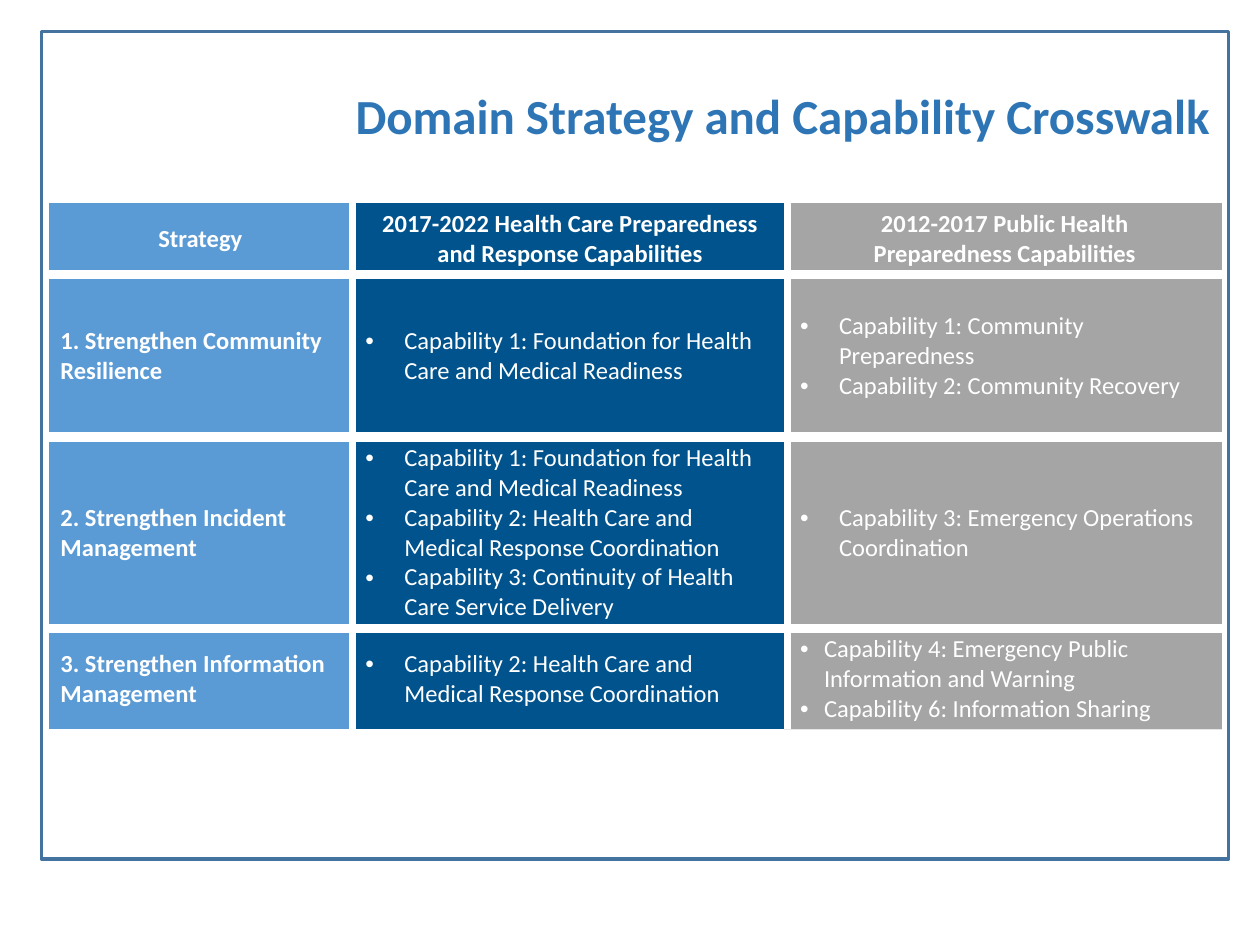
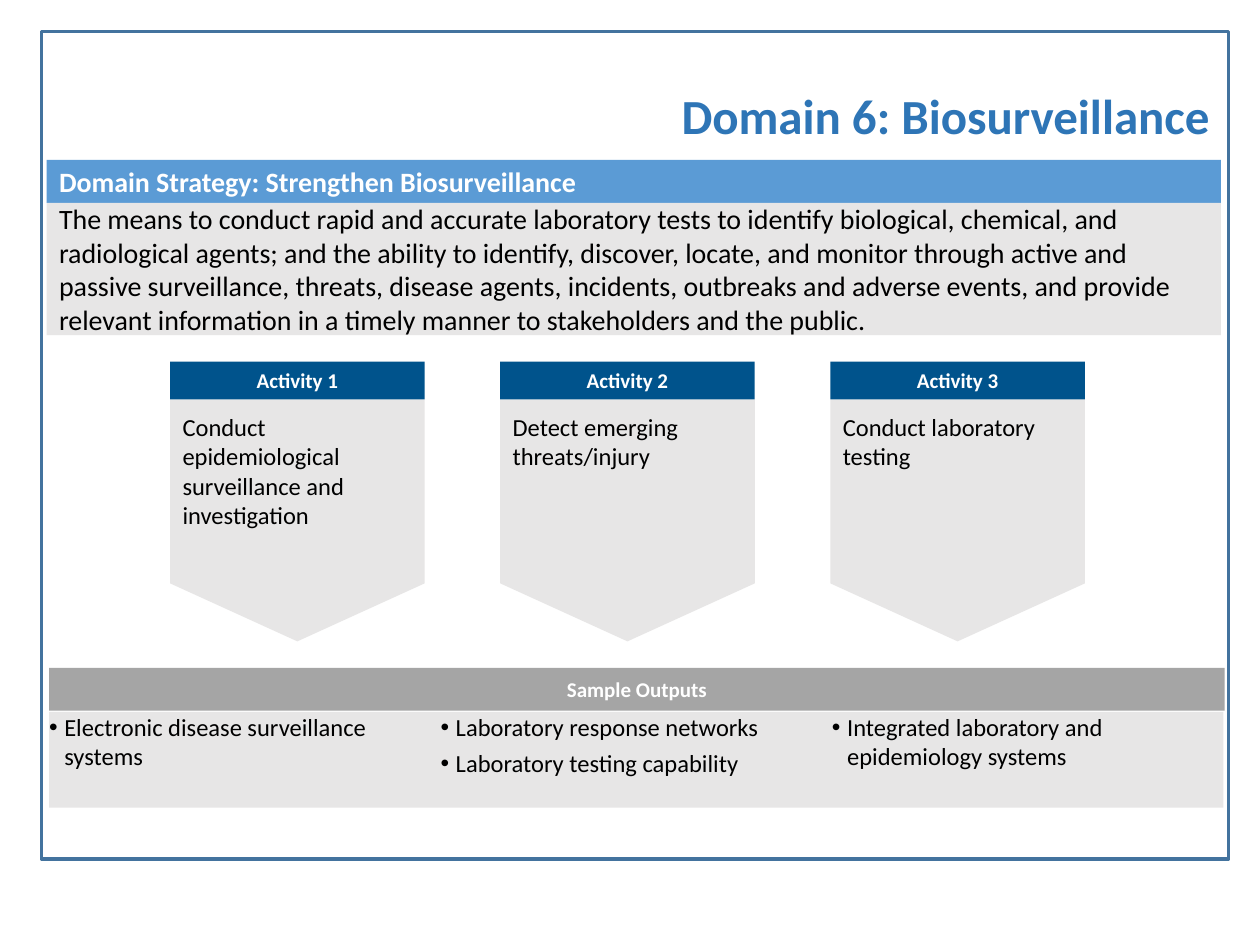
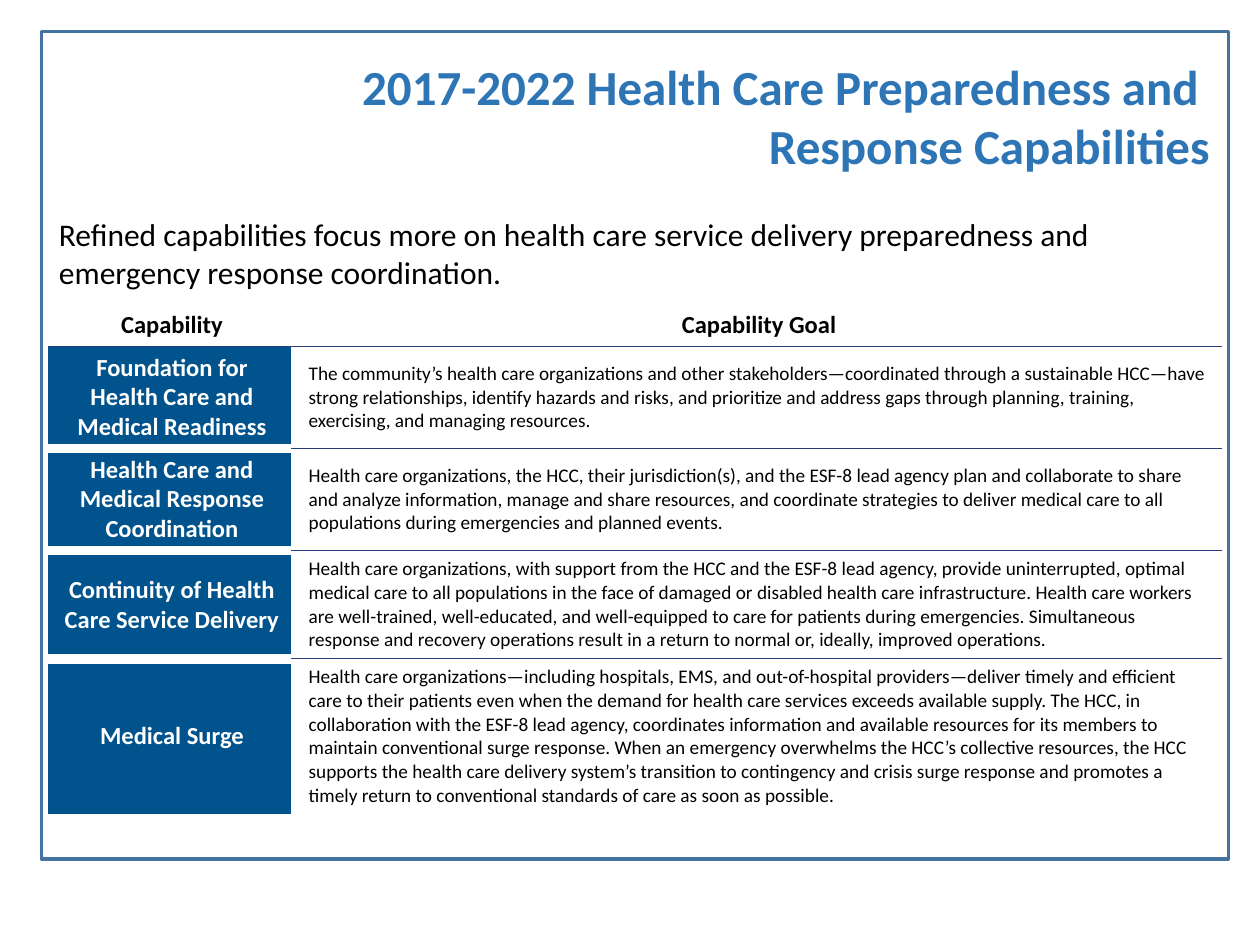
from copy import deepcopy

from pptx import Presentation
from pptx.dml.color import RGBColor
from pptx.enum.shapes import MSO_SHAPE
from pptx.enum.text import MSO_ANCHOR, MSO_AUTO_SIZE, PP_ALIGN
from pptx.oxml.ns import qn
from pptx.util import Inches, Pt
from lxml.etree import SubElement

FONT = "Calibri"
WHITE, BLACK, TITLE, FRAME = "FFFFFF", "000000", "2E75B6", "43739E"
SKY, NAVY, GRAY, PALE, RULE = "5B9BD5", "00538C", "A5A5A5", "E7E6E6", "273D77"
NO_STYLE = "{2D5ABB26-0587-4C30-8999-92F81FD0307C}"
CENTER, RIGHT = PP_ALIGN.CENTER, PP_ALIGN.RIGHT
TOP, MIDDLE = MSO_ANCHOR.TOP, MSO_ANCHOR.MIDDLE

CROSSWALK_HEADER = [
    ["Strategy"],
    ["2017-2022 Health Care Preparedness and Response Capabilities"],
    ["2012-2017 Public Health", "Preparedness Capabilities"],
]
CROSSWALK = [
    (["1. Strengthen Community Resilience"],
     ["Capability 1: Foundation for Health Care and Medical Readiness"],
     ["Capability 1: Community Preparedness", "Capability 2: Community Recovery"]),
    (["2. Strengthen Incident Management"],
     ["Capability 1: Foundation for Health Care and Medical Readiness",
      "Capability 2: Health Care and Medical Response Coordination",
      "Capability 3: Continuity of Health Care Service Delivery"],
     ["Capability 3: Emergency Operations Coordination"]),
    (["3. Strengthen Information Management"],
     ["Capability 2: Health Care and Medical Response Coordination"],
     ["Capability 4: Emergency Public Information and Warning",
      "Capability 6: Information Sharing"]),
]
STRATEGY = (
    "The means to conduct rapid and accurate laboratory tests to identify biological, "
    "chemical, and radiological agents; and the ability to identify, discover, locate, and "
    "monitor through active and passive surveillance, threats, disease agents, incidents, "
    "outbreaks and adverse events, and provide relevant information in a timely manner to "
    "stakeholders and the public."
)
ACTIVITIES = [
    "Conduct epidemiological surveillance and investigation",
    "Detect emerging threats/injury",
    "Conduct laboratory testing",
]
OUTPUTS = [
    ["Electronic disease surveillance systems"],
    ["Laboratory response networks", "Laboratory testing capability"],
    ["Integrated laboratory and epidemiology systems"],
]
GOALS = [
    ("Foundation for Health Care and Medical Readiness",
     "The community’s health care organizations and other stakeholders—coordinated through a "
     "sustainable HCC—have strong relationships, identify hazards and risks, and prioritize "
     "and address gaps through planning, training, exercising, and managing resources."),
    ("Health Care and Medical Response Coordination",
     "Health care organizations, the HCC, their jurisdiction(s), and the ESF-8 lead agency "
     "plan and collaborate to share and analyze information, manage and share resources, and "
     "coordinate strategies to deliver medical care to all populations during emergencies "
     "and planned events."),
    ("Continuity of Health Care Service Delivery",
     "Health care organizations, with support from the HCC and the ESF-8 lead agency, provide "
     "uninterrupted, optimal medical care to all populations in the face of damaged or "
     "disabled health care infrastructure. Health care workers are well-trained, "
     "well-educated, and well-equipped to care for patients during emergencies. Simultaneous "
     "response and recovery operations result in a return to normal or, ideally, improved "
     "operations."),
    ("Medical Surge",
     "Health care organizations—including hospitals, EMS, and out-of-hospital "
     "providers—deliver timely and efficient care to their patients even when the demand for "
     "health care services exceeds available supply. The HCC, in collaboration with the ESF-8 "
     "lead agency, coordinates information and available resources for its members to "
     "maintain conventional surge response. When an emergency overwhelms the HCC’s collective "
     "resources, the HCC supports the health care delivery system’s transition to contingency "
     "and crisis surge response and promotes a timely return to conventional standards of "
     "care as soon as possible."),
]


def rgb(color):
    """Turn a hex string into a colour."""
    return RGBColor.from_string(color)


def set_all(obj, values):
    """Set attributes from a dict."""
    for name, value in values.items():
        setattr(obj, name, value)


def add_bullet(p, indent):
    """Give a paragraph a hanging round bullet."""
    pPr = p._p.get_or_add_pPr()
    pPr.set("marL", str(Inches(indent)))
    pPr.set("indent", str(-Inches(indent)))
    SubElement(pPr, qn("a:buFont"), typeface="Arial")
    SubElement(pPr, qn("a:buChar"), char="•")


def write(tf, texts, size, color=BLACK, bold=False, align=None, indent=0, gap=0):
    """Write formatted paragraphs into a text frame."""
    for i, text in enumerate(texts):
        p = tf.add_paragraph() if i else tf.paragraphs[0]
        p.text = text
        if indent:
            add_bullet(p, indent)
        set_all(p, {"alignment": align, "space_before": Pt(gap if i else 0)})
        for r in p.runs:
            set_all(r.font, {"name": FONT, "size": Pt(size), "bold": bold})
            r.font.color.rgb = rgb(color)
        for br in p._p.findall(qn("a:br")):
            br.insert(0, deepcopy(p.runs[0]._r.rPr))


def set_frame(tf, anchor, inset):
    """Wrap a text frame and set its anchor and insets."""
    sides = ("margin_left", "margin_top", "margin_right", "margin_bottom")
    set_all(tf, {"word_wrap": True, "auto_size": MSO_AUTO_SIZE.NONE, "vertical_anchor": anchor})
    set_all(tf, dict.fromkeys(sides, Inches(inset)))


def paint(s, fill):
    """Give a shape a plain fill with no line or shadow."""
    s.shadow.inherit = False
    s.fill.solid()
    s.fill.fore_color.rgb = rgb(fill)
    s.line.fill.background()


def add_band(slide, box, fill, text=None, size=12, **fmt):
    """Add a filled rectangle, with text if given."""
    s = slide.shapes.add_shape(MSO_SHAPE.RECTANGLE, *map(Inches, box))
    paint(s, fill)
    set_frame(s.text_frame, MIDDLE, 0.1)
    if text:
        write(s.text_frame, [text], size, **fmt)


def add_textbox(slide, box, texts, size, inset, **fmt):
    """Add a wrapping text box."""
    s = slide.shapes.add_textbox(*map(Inches, box))
    set_frame(s.text_frame, TOP, inset)
    write(s.text_frame, texts, size, **fmt)


def add_activity(slide, x, label, text):
    """Add a labelled pentagon that points down."""
    top, shoulder, tip, width = 3.17, 4.63, 5.09, 2.02
    points = [(x + width, top), (x + width, shoulder), (x + width / 2, tip), (x, shoulder)]
    builder = slide.shapes.build_freeform(Inches(x), Inches(top), scale=1.0)
    builder.add_line_segments([(Inches(a), Inches(b)) for a, b in points], close=True)
    s = builder.convert_to_shape()
    paint(s, PALE)
    set_frame(s.text_frame, TOP, 0.1)
    write(s.text_frame, [text], 14, align=PP_ALIGN.LEFT)
    add_band(slide, (x, 2.87, width, 0.3), NAVY, label, color=WHITE, bold=True, align=CENTER)


def add_frame(slide):
    """Put the border of all slides on the layout."""
    s = slide.shapes.add_shape(MSO_SHAPE.RECTANGLE, *map(Inches, (0.33, 0.25, 9.42, 6.57)))
    s.shadow.inherit = False
    s.fill.background()
    s.line.color.rgb = rgb(FRAME)
    s.line.width = Pt(2)
    s._element.nvSpPr.cNvPr.set("id", "20")
    slide.slide_layout.shapes._spTree.append(s._element)


def add_slide(prs, title):
    """Add a slide with its right-aligned title."""
    slide = prs.slides.add_slide(prs.slide_layouts[5])
    s = slide.shapes.title
    box = map(Inches, (0.38, 0.42, 9.32, 0.99))
    set_all(s, dict(zip(("left", "top", "width", "height"), box)))
    set_frame(s.text_frame, MIDDLE, 0.1)
    write(s.text_frame, [title], 28, TITLE, True, RIGHT)
    return slide


def add_grid(slide, x, y, widths, heights):
    """Add a table without a style."""
    box = map(Inches, (x, y, sum(widths), sum(heights)))
    table = slide.shapes.add_table(len(heights), len(widths), *box).table
    set_all(table, {"first_row": False, "horz_banding": False})
    table._tbl.tblPr.find(qn("a:tableStyleId")).text = NO_STYLE
    for col, width in zip(table.columns, widths):
        col.width = Inches(width)
    for row, height in zip(table.rows, heights):
        row.height = Inches(height)
    return table


def fill_cell(cell, texts, size, fill, borders, **fmt):
    """Fill a cell and draw its borders, given by side as colour and width."""
    set_all(cell, {"vertical_anchor": MIDDLE, "margin_top": Inches(0.03),
                   "margin_bottom": Inches(0.03)})
    tcPr = cell._tc.get_or_add_tcPr()
    for side in "LRTB":
        if side in borders:
            color, width = borders[side]
            ln = SubElement(tcPr, qn(f"a:ln{side}"), w=str(Pt(width)))
            SubElement(SubElement(ln, qn("a:solidFill")), qn("a:srgbClr"), val=color)
    if fill:
        cell.fill.solid()
        cell.fill.fore_color.rgb = rgb(fill)
    else:
        cell.fill.background()
    write(cell.text_frame, texts, size, **fmt)


def crosswalk_slide(prs):
    """Build the strategy and capability table."""
    slide = add_slide(prs, "Domain Strategy and Capability Crosswalk")
    add_frame(slide)
    table = add_grid(slide, 0.38, 1.61, (2.42, 3.45, 3.45), (0.57, 1.29, 1.52, 0.8))
    last = len(CROSSWALK)
    for i, row in enumerate([CROSSWALK_HEADER, *CROSSWALK]):
        for j, (texts, fill) in enumerate(zip(row, (SKY, NAVY, GRAY))):
            borders = {"L": (WHITE, 4.5 if j else 1), "B": (WHITE, 1 if i == last else 6)}
            if j < 2:
                borders["R"] = (WHITE, 4.5)
            elif i == last:
                borders["B"] = (PALE, 1)
            if i:
                borders["T"] = (WHITE, 6)
            hang = 0.19 if (i, j) == (last, 2) else 0.31
            fill_cell(table.cell(i, j), texts, 14, fill, borders, color=WHITE,
                      bold=i == 0 or j == 0, align=None if i else CENTER,
                      indent=hang if i and j else 0)


def biosurveillance_slide(prs):
    """Build the strategy, its activities and sample outputs."""
    slide = add_slide(prs, "Domain 6: Biosurveillance")
    left = {"align": PP_ALIGN.LEFT}
    add_band(slide, (0.37, 1.27, 9.32, 0.34), SKY, "Domain Strategy: Strengthen Biosurveillance",
             16, color=WHITE, bold=True, **left)
    add_band(slide, (0.37, 1.61, 9.32, 1.05), PALE, STRATEGY, 16, **left)
    for i, text in enumerate(ACTIVITIES):
        add_activity(slide, 1.35 + 2.62 * i, f"Activity {i + 1}", text)
    add_band(slide, (0.39, 5.65, 9.32, 0.76), PALE)
    add_band(slide, (0.39, 5.3, 9.33, 0.34), GRAY, "Sample Outputs", color=WHITE, bold=True,
             align=CENTER)
    width = 9.32 / len(OUTPUTS)
    for i, texts in enumerate(OUTPUTS):
        add_textbox(slide, (0.39 + width * i, 5.65, width, 0.76), texts, 14, 0,
                    indent=0.12, gap=4)


def goals_slide(prs):
    """Build the table of capabilities and goals."""
    slide = add_slide(prs, "2017-2022 Health Care Preparedness and \vResponse Capabilities")
    table = add_grid(slide, 0.38, 2.41, (1.97, 7.35), (0.34, 0.81, 0.81, 0.86, 1.23))
    rule, gap = (RULE, 0.5), (WHITE, 6)
    for j, text in enumerate(("Capability", "Capability Goal")):
        fill_cell(table.cell(0, j), [text], 14, None, {"B": rule, "LR"[1 - j]: gap},
                  bold=True, align=CENTER)
    for i, (name, goal) in enumerate(GOALS, 1):
        name_borders = {"R": gap, "T": rule if i == 1 else gap}
        goal_borders = {"L": gap, "T": rule}
        if i < len(GOALS):
            name_borders["B"], goal_borders["B"] = gap, rule
        fill_cell(table.cell(i, 0), [name], 14, NAVY, name_borders, color=WHITE, bold=True,
                  align=CENTER)
        fill_cell(table.cell(i, 1), [goal], 11, None, goal_borders)
    add_textbox(slide, (0.37, 1.61, 9.34, 0.71),
                ["Refined capabilities focus more on health care service delivery preparedness "
                 "and emergency response coordination."], 18, 0.1)


def main():
    """Build and save the presentation."""
    prs = Presentation()
    set_all(prs, {"slide_width": Inches(10), "slide_height": Inches(7.5)})
    crosswalk_slide(prs)
    biosurveillance_slide(prs)
    goals_slide(prs)
    prs.save("out.pptx")


if __name__ == "__main__":
    main()
